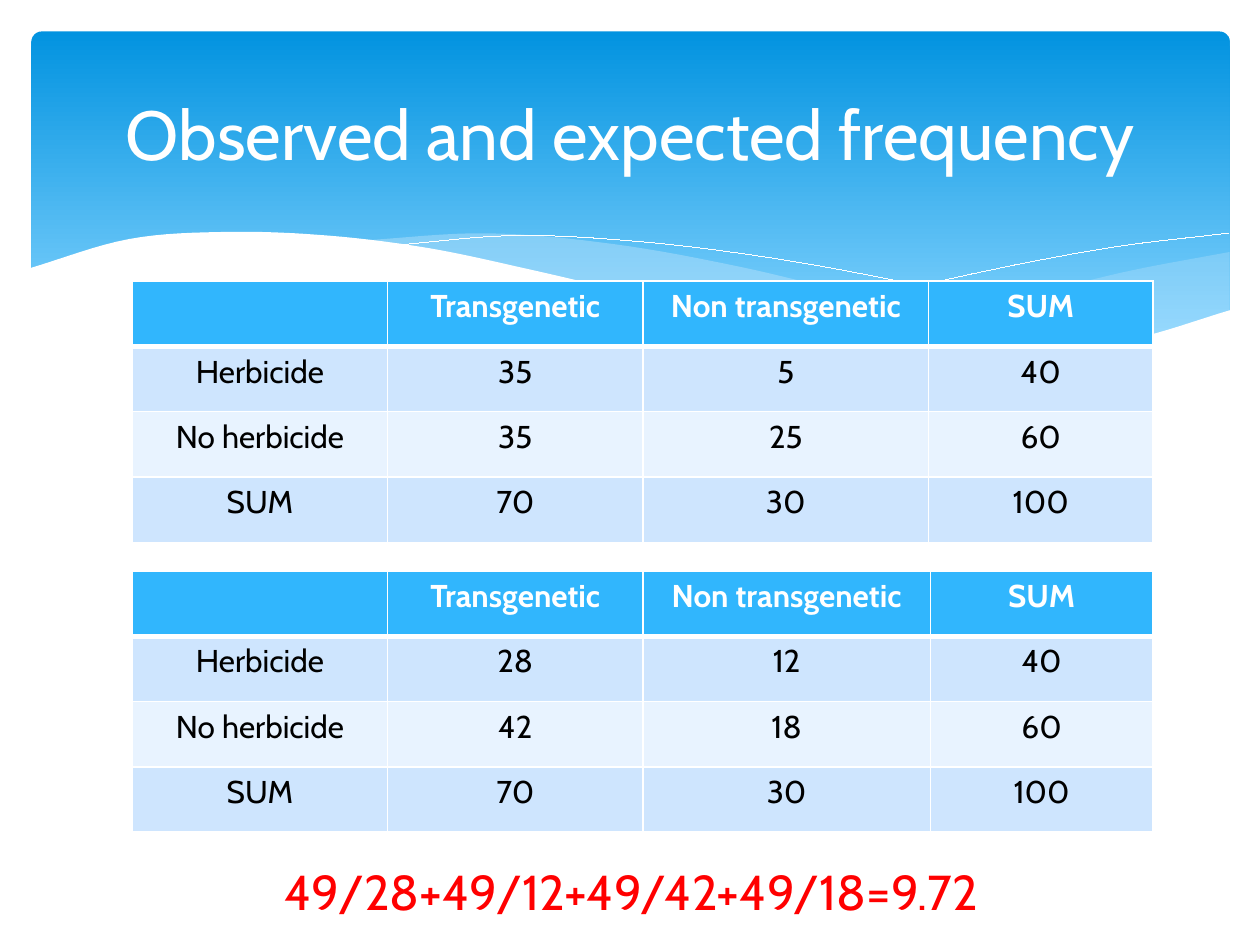
import pptx
import pptx.dml.color
import pptx.enum.shapes
import pptx.enum.text
import pptx.oxml
import pptx.oxml.ns
import pptx.util

Pt = pptx.util.Pt
WHITE, RED, BLACK = "FFFFFF", "FF0000", "000000"
HEADER_BLUE, PALE_BLUE, LIGHT_BLUE = "31B6FD", "CEE5FE", "E8F3FF"
BANNER_TOP, BANNER_BOTTOM, WAVE_BLUE = "0293E0", "83D3FE", "C6E7FC"
XML_NAMES = pptx.oxml.ns.nsdecls("a")


def rgb(code):
    return pptx.dml.color.RGBColor.from_string(code)


def write(frame, text, color, font_format):
    paragraph = frame.paragraphs[0]
    paragraph.alignment = pptx.enum.text.PP_ALIGN.CENTER
    run = paragraph.add_run()
    run.text = text
    run.font.name = "Cabin"
    run.font.color.rgb = rgb(color)
    for name, value in font_format.items():
        setattr(run.font, name, value)


deck = pptx.Presentation()
deck.slide_width, deck.slide_height = Pt(720), Pt(540)
slide = deck.slides.add_slide(deck.slide_layouts[6])

# Gradient banner, dark at the top
banner = slide.shapes.add_shape(
    pptx.enum.shapes.MSO_SHAPE.ROUNDED_RECTANGLE, Pt(18), Pt(18), Pt(684.7), Pt(194.4))
banner.adjustments[0] = 0.03
banner.shadow.inherit = False
banner.line.fill.background()
banner.fill.gradient()
banner.fill.gradient_angle = 270
for stop, position, color in zip(
        banner.fill.gradient_stops, (0, 0.9), (BANNER_TOP, BANNER_BOTTOM)):
    stop.position = position
    stop.color.rgb = rgb(color)

# Waves: each edge runs from one x to another through equally spaced heights.
# Waves have a fill and an opacity in percent; crests are open hairlines without fill.
waves = [
    {"name": "right wave", "fill": WAVE_BLUE, "opacity": 29, "edges": [
        (702.7, 475.9, [144, 154.7, 168.3, 180.4, 190.8]),
        (475.9, 702.7, [190.8, 197.6, 199.8, 194.6, 177.8])]},
    {"name": "middle wave", "fill": WAVE_BLUE, "opacity": 40, "edges": [
        (643, 205.9, [196.6, 185.4, 170.2, 152.8, 139.6, 133.3, 137.5]),
        (205.9, 643, [137.5, 149.7, 166.6, 182, 194, 200.1, 196.6])]},
    {"name": "long crest", "fill": None, "edges": [
        (222.5, 653, [140.4, 134.6, 138.1, 146.9, 159.8, 175.9, 195.8])]},
    {"name": "right crest", "fill": None, "edges": [
        (441.4, 702, [185, 167.8, 153.1, 141.1, 133.2])]},
    {"name": "white wave", "fill": WHITE, "opacity": 100, "edges": [
        (703.4, 16.6, [177.1, 193.8, 199.3, 196.6, 189.8, 179.7, 167.3,
                       154, 141.9, 134.7, 132.5, 136.6, 153.4]),
        (16.6, 703.4, [236.9, 236.9])]},
]
STEPS = 8  # points drawn between two neighbouring heights
for wave in waves:
    outline = []
    for start, end, heights in wave["edges"]:
        spans = len(heights) - 1
        # Catmull-Rom spline, extended in a straight line past both ends
        knots = [2 * heights[0] - heights[1], *heights, 2 * heights[-1] - heights[-2]]
        for i in range(spans * STEPS + 1):
            span = min(i // STEPS, spans - 1)
            t = i / STEPS - span
            a, b, c, d = knots[span:span + 4]
            y = b + t / 2 * (c - a + t * (2 * a - 5 * b + 4 * c - d
                                          + t * (3 * b - a - 3 * c + d)))
            x = start + (end - start) * i / (spans * STEPS)
            outline.append((Pt(x), Pt(y)))

    builder = slide.shapes.build_freeform(*outline[0])
    builder.add_line_segments(outline[1:], close=wave["fill"] is not None)
    ribbon = builder.convert_to_shape()
    ribbon.shadow.inherit = False
    if wave["fill"] is None:
        ribbon.fill.background()
        ribbon.line.color.rgb = rgb(WHITE)
        ribbon.line.width = Pt(0.01)
    else:
        ribbon.line.fill.background()
        ribbon.fill.solid()
        ribbon.fill.fore_color.rgb = rgb(wave["fill"])
        tint = ribbon._element.spPr.find(".//" + pptx.oxml.ns.qn("a:srgbClr"))
        tint.append(pptx.oxml.parse_xml(
            f'<a:alpha {XML_NAMES} val="{wave["opacity"] * 1000}"/>'))

# Title and chi-square sum
captions = [
    ("Observed and expected frequency", (36, 26.6, 648, 98.6), 39.6, WHITE,
     {"word_wrap": True, "vertical_anchor": pptx.enum.text.MSO_ANCHOR.MIDDLE}),
    ("49/28+49/12+49/42+49/18=9.72", (113, 488.9, 495.4, 41), 28, RED,
     {"word_wrap": True, "auto_size": pptx.enum.text.MSO_AUTO_SIZE.SHAPE_TO_FIT_TEXT}),
]
for text, place, size, color, frame_format in captions:
    frame = slide.shapes.add_textbox(*map(Pt, place)).text_frame
    for name, value in frame_format.items():
        setattr(frame, name, value)
    write(frame, text, color, {"size": Pt(size)})

# Expected count = row sum * column sum / total
observed = [[35, 5], [35, 25]]
row_sums = [sum(counts) for counts in observed]
column_sums = [sum(counts) for counts in zip(*observed)]
total = sum(row_sums)
expected = [[r * c // total for c in column_sums] for r in row_sums]

# Observed table above, expected table below
treatments = ["Herbicide", "No herbicide"]
row_fills = [HEADER_BLUE, PALE_BLUE, LIGHT_BLUE, PALE_BLUE]
ROW_HEIGHT = 37.35
for top, counts, widths in [
        (160.6, observed, (145.9, 145.9, 163.3, 128.1)),
        (326.2, expected, (145.9, 145.9, 164.2, 127.2))]:
    rows = [["", "Transgenetic", "Non transgenetic", "SUM"]]
    rows += [[treatment, *pair, sum(pair)] for treatment, pair in zip(treatments, counts)]
    rows += [["SUM", *column_sums, total]]
    frequencies = slide.shapes.add_table(
        len(rows), len(widths), Pt(75.6), Pt(top),
        Pt(sum(widths)), Pt(ROW_HEIGHT * len(rows))).table
    for column, width in zip(frequencies.columns, widths):
        column.width = Pt(width)
    for r, row in enumerate(rows):
        is_header = r == 0
        frequencies.rows[r].height = Pt(ROW_HEIGHT)
        # White borders, heavier under the header
        borders = {"lnL": 1, "lnR": 1, "lnT": 3 if r == 1 else 1, "lnB": 3 if is_header else 1}
        for c, value in enumerate(row):
            cell = frequencies.cell(r, c)
            cell.fill.solid()
            cell.fill.fore_color.rgb = rgb(row_fills[r])
            if value != "":
                write(cell.text_frame, str(value), WHITE if is_header else BLACK,
                      {"size": Pt(18), "bold": is_header})
            for i, (side, weight) in enumerate(borders.items()):
                cell._tc.get_or_add_tcPr().insert(i, pptx.oxml.parse_xml(
                    f'<a:{side} {XML_NAMES} w="{Pt(weight)}">'
                    f'<a:solidFill><a:srgbClr val="{WHITE}"/></a:solidFill></a:{side}>'))

deck.save("out.pptx")
